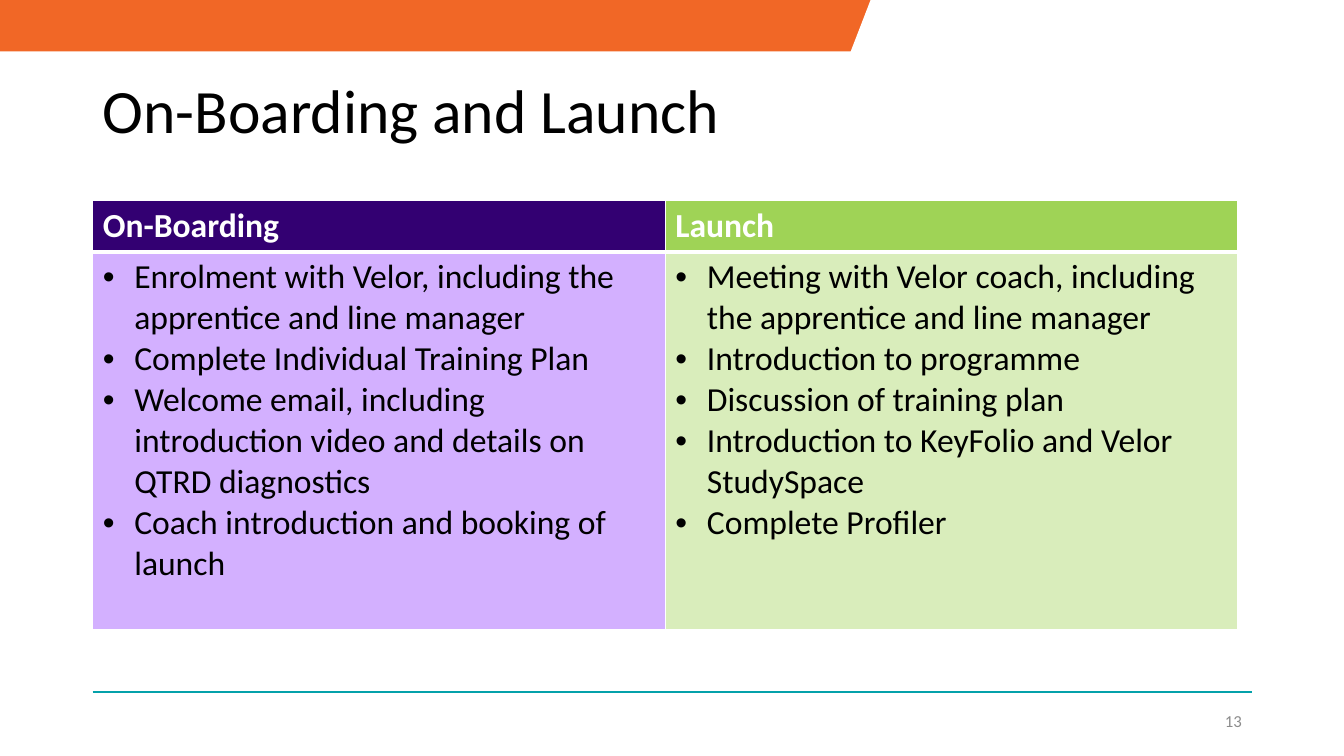
from lxml import etree
from pptx import Presentation
from pptx.dml.color import RGBColor
from pptx.enum.shapes import MSO_CONNECTOR, MSO_SHAPE
from pptx.enum.text import MSO_ANCHOR, PP_ALIGN
from pptx.oxml.ns import qn
from pptx.util import Pt

RECTANGLE = MSO_SHAPE.RECTANGLE
TRIANGLE = MSO_SHAPE.ISOSCELES_TRIANGLE
STRAIGHT = MSO_CONNECTOR.STRAIGHT
MIDDLE = MSO_ANCHOR.MIDDLE
LEFT, RIGHT = PP_ALIGN.LEFT, PP_ALIGN.RIGHT

WHITE = RGBColor(0xFF, 0xFF, 0xFF)
BLACK = RGBColor(0x00, 0x00, 0x00)
ORANGE = RGBColor(0xF1, 0x67, 0x26)
TEAL = RGBColor(0x04, 0xA1, 0xAA)
GREY = RGBColor(0x8C, 0x8C, 0x8C)
PURPLE = RGBColor(0x33, 0x00, 0x72)
LILAC = RGBColor(0xD3, 0xB0, 0xFF)
GREEN = RGBColor(0x9F, 0xD3, 0x56)
PALE_GREEN = RGBColor(0xD9, 0xED, 0xBB)

FONT = "Calibri"
MARGIN = 66.24
COLUMN_WIDTH = 409
HEADER_HEIGHT, BODY_HEIGHT = 36.5, 270
BULLET_INDENT = 22.5

STAGES = [
    ("On-Boarding", PURPLE, LILAC, [
        "Enrolment with Velor, including the apprentice and line manager",
        "Complete Individual Training Plan",
        "Welcome email, including introduction video and details on QTRD diagnostics",
        "Coach introduction and booking of launch",
    ]),
    ("Launch", GREEN, PALE_GREEN, [
        "Meeting with Velor coach, including the apprentice and line manager",
        "Introduction to programme",
        "Discussion of training plan",
        "Introduction to KeyFolio and Velor StudySpace",
        "Complete Profiler",
    ]),
]


def add_text(paragraph, text, size, color, bold=False):
    """Add one formatted run to a paragraph."""
    run = paragraph.add_run()
    run.text = text
    run.font.name = FONT
    run.font.size = Pt(size)
    run.font.bold = bold
    run.font.color.rgb = color


def add_block(slide, kind, left, top, width, height, color):
    """Add a plain filled shape."""
    block = slide.shapes.add_shape(kind, Pt(left), Pt(top), Pt(width), Pt(height))
    block.shadow.inherit = False
    block.fill.solid()
    block.fill.fore_color.rgb = color
    block.line.fill.background()
    return block


def add_banner(slide):
    """Draw the orange banner with its slanted end."""
    add_block(slide, RECTANGLE, 0, 0, 622, 36.72, ORANGE)
    slant = add_block(slide, TRIANGLE, 599, 0, 46.8, 60.5, WHITE)
    slant.line.color.rgb = WHITE
    slant.line.width = Pt(1)


def add_footer(slide, number):
    """Draw the footer rule and the slide number."""
    rule = slide.shapes.add_connector(STRAIGHT, Pt(MARGIN), Pt(494.5), Pt(894.24), Pt(494.5))
    rule.line.color.rgb = TEAL
    rule.line.width = Pt(1.5)
    etree.SubElement(rule._element.spPr, qn("a:effectLst"))
    number_frame = slide.shapes.add_textbox(Pt(678.24), Pt(500.4), Pt(216), Pt(28.8)).text_frame
    number_frame.word_wrap = True
    number_frame.vertical_anchor = MIDDLE
    number_frame.paragraphs[0].alignment = RIGHT
    add_text(number_frame.paragraphs[0], number, 12, GREY)


def set_title(slide, text):
    """Place and format the slide title."""
    title = slide.shapes.title
    title.left, title.top, title.width, title.height = Pt(MARGIN), Pt(28.8), Pt(650), Pt(104.4)
    title.text_frame.vertical_anchor = MIDDLE
    heading = title.text_frame.paragraphs[0]
    heading.alignment = LEFT
    heading.line_spacing = 0.9
    add_text(heading, text, 44, BLACK)


def style_cell(cell, color, top_width, bottom_width):
    """Give a cell white borders and a solid fill."""
    properties = cell._tc.get_or_add_tcPr()
    borders = {"L": 1, "R": 1, "T": top_width, "B": bottom_width}
    for side, width in borders.items():
        border = etree.SubElement(properties, qn(f"a:ln{side}"), w=str(Pt(width)))
        fill = etree.SubElement(border, qn("a:solidFill"))
        etree.SubElement(fill, qn("a:srgbClr"), val=str(WHITE))
    cell.fill.solid()
    cell.fill.fore_color.rgb = color


def add_bullets(cell, items):
    """Fill a cell with bulleted paragraphs."""
    frame = cell.text_frame
    for index, item in enumerate(items):
        paragraph = frame.add_paragraph() if index else frame.paragraphs[0]
        properties = paragraph._p.get_or_add_pPr()
        properties.set("marL", str(Pt(BULLET_INDENT)))
        properties.set("indent", str(-Pt(BULLET_INDENT)))
        etree.SubElement(properties, qn("a:buFont"), typeface="Arial")
        etree.SubElement(properties, qn("a:buChar"), char="•")
        add_text(paragraph, item, 24, BLACK)


def add_stage_table(slide, stages):
    """Add the table with one column per stage."""
    table = slide.shapes.add_table(
        2, len(stages), Pt(MARGIN), Pt(143.28),
        Pt(COLUMN_WIDTH * len(stages)), Pt(HEADER_HEIGHT + BODY_HEIGHT)).table
    table.rows[0].height, table.rows[1].height = Pt(HEADER_HEIGHT), Pt(BODY_HEIGHT)
    for column, (name, header_color, body_color, items) in enumerate(stages):
        table.columns[column].width = Pt(COLUMN_WIDTH)
        header, body = table.cell(0, column), table.cell(1, column)
        style_cell(header, header_color, 1, 3)
        style_cell(body, body_color, 3, 1)
        add_text(header.text_frame.paragraphs[0], name, 24, WHITE, bold=True)
        add_bullets(body, items)


def main():
    """Build and save the slide."""
    deck = Presentation()
    deck.slide_width, deck.slide_height = Pt(960), Pt(540)
    slide = deck.slides.add_slide(deck.slide_layouts[5])
    add_banner(slide)
    set_title(slide, "On-Boarding and Launch")
    add_stage_table(slide, STAGES)
    add_footer(slide, "13")
    deck.save("out.pptx")


if __name__ == "__main__":
    main()
